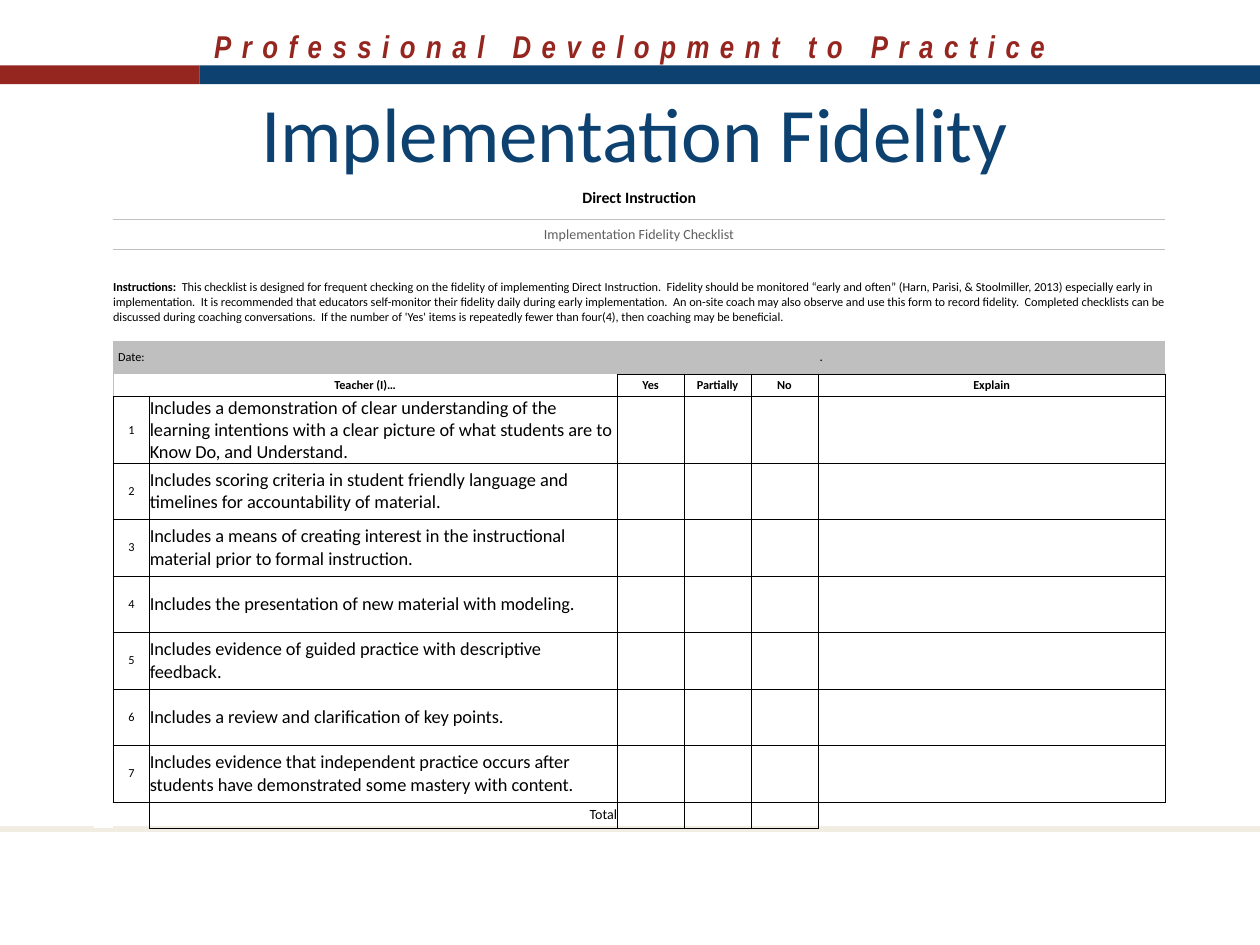
from lxml.etree import SubElement
from pptx import Presentation
from pptx.dml.color import RGBColor
from pptx.enum.shapes import MSO_CONNECTOR as Connector, MSO_SHAPE as Shape
from pptx.enum.text import MSO_ANCHOR as Anchor, MSO_AUTO_SIZE as AutoSize, PP_ALIGN as Align
from pptx.oxml.ns import qn
from pptx.util import Cm, Pt

RED, BLUE, BEIGE = "95261F", "0D4170", "F2EDE2"
BLACK, WHITE, GRAY, SILVER, DARK_GRAY = "000000", "FFFFFF", "BFBFBF", "C0C0C0", "5F5F5F"


def color(value):
    return RGBColor.from_string(value)


def style_run(run, size, value=BLACK, bold=False, name="Calibri"):
    run.font.name, run.font.size, run.font.bold = name, Pt(size), bold
    run.font.color.rgb = color(value)


presentation = Presentation()
presentation.slide_width, presentation.slide_height = Cm(25.4), Cm(19.05)
slide = presentation.slides.add_slide(presentation.slide_layouts[6])

# Header line with wide letter spacing
header = slide.shapes.add_textbox(Cm(0), Cm(0.43), Cm(25.4), Cm(1.02)).text_frame
header.word_wrap = True
header.auto_size = AutoSize.SHAPE_TO_FIT_TEXT
header.text = "Professional Development to Practice"
header.paragraphs[0].alignment = Align.CENTER
header_run = header.paragraphs[0].runs[0]
style_run(header_run, 18, RED, True, "Arial Narrow")
header_run.font.italic = True
header_run.font._element.set("spc", "600")

# Two-colour band
for left, width, fill in [(0, 4.02, RED), (4.02, 21.38, BLUE)]:
    band = slide.shapes.add_shape(Shape.RECTANGLE, Cm(left), Cm(1.32), Cm(width), Cm(0.38))
    band.shadow.inherit = False
    band.fill.solid()
    band.fill.fore_color.rgb = color(fill)
    band.line.fill.background()

# Footer rule
rule = slide.shapes.add_connector(Connector.STRAIGHT, Cm(0), Cm(16.71), Cm(25.4), Cm(16.71))
rule.line.color.rgb = color(BEIGE)
rule.line.width = Pt(3)
SubElement(rule._element.spPr, qn("a:effectLst"))

# Title
title = slide.shapes.add_textbox(Cm(1.27), Cm(1.7), Cm(23.06), Cm(1.91)).text_frame
title.word_wrap = True
title.vertical_anchor = Anchor.MIDDLE
title.text = "Implementation Fidelity"
title.paragraphs[0].alignment = Align.CENTER
style_run(title.paragraphs[0].runs[0], 44, BLUE)

# Checklist table
column_widths = [0.38, 0.74, 9.42, 1.35, 1.35, 1.35, 7]
row_heights = [0.61, 0.61, 1.52, 0.33, 0.66, 0.46] + [1.14] * 7 + [0.53]
frame = slide.shapes.add_table(len(row_heights), len(column_widths),
                               Cm(1.9), Cm(3.81), Cm(sum(column_widths)), Cm(sum(row_heights)))
table = frame.table
table.first_row = table.horz_banding = False
for column, width in zip(table.columns, column_widths):
    column.width = Cm(width)
for row, height in zip(table.rows, row_heights):
    row.height = Cm(height)
for row, last in [(0, 6), (1, 6), (2, 6), (5, 2)]:
    table.cell(row, 1).merge(table.cell(row, last))

# Cell texts: (row, column) -> runs of (text, size, bold), alignment, anchor, colour
instructions = (
    "  This checklist is designed for frequent checking on the fidelity of implementing Direct "
    "Instruction.  Fidelity should be monitored “early and often” (Harn, Parisi, & Stoolmiller, "
    "2013) especially early in implementation.  It is recommended that educators self-monitor "
    "their fidelity daily during early implementation.  An on-site coach may also observe and use "
    "this form to record fidelity.  Completed checklists can be discussed during coaching "
    "conversations.  If the number of 'Yes' items is repeatedly fewer than four(4), then coaching "
    "may be beneficial.")
practices = [
    "Includes a demonstration of clear understanding of the learning intentions with a clear "
    "picture of what students are to Know Do, and Understand.",
    "Includes scoring criteria in student friendly language and timelines for accountability "
    "of material.",
    "Includes a means of creating interest in the instructional material prior to formal "
    "instruction.",
    "Includes the presentation of new material with modeling.",
    "Includes evidence of guided practice with descriptive feedback.",
    "Includes a review and clarification of key points.",
    "Includes evidence that independent practice occurs after students have demonstrated some "
    "mastery with content.",
]
texts = {
    (0, 1): ([("Direct Instruction", 9, True)], Align.CENTER, Anchor.TOP, BLACK),
    (1, 1): ([("Implementation Fidelity Checklist", 8, False)],
             Align.CENTER, Anchor.MIDDLE, DARK_GRAY),
    (2, 1): ([("Instructions:", 7, True), (instructions, 7, False)],
             Align.LEFT, Anchor.BOTTOM, BLACK),
    (4, 1): ([("Date:", 7, False)], Align.CENTER, Anchor.MIDDLE, BLACK),
    (4, 6): ([(".", 6, True)], Align.LEFT, Anchor.MIDDLE, BLACK),
    (13, 2): ([("Total", 8, False)], Align.RIGHT, Anchor.MIDDLE, BLACK),
}
headings = {1: "Teacher (I)…", 3: "Yes", 4: "Partially", 5: "No", 6: "Explain"}
for column, heading in headings.items():
    texts[5, column] = ([(heading, 7, True)], Align.CENTER, Anchor.MIDDLE, BLACK)
for number, practice in enumerate(practices, 1):
    texts[5 + number, 1] = ([(str(number), 7, False)], Align.CENTER, Anchor.MIDDLE, BLACK)
    texts[5 + number, 2] = ([(practice, 10.5, False)], Align.LEFT, Anchor.MIDDLE, BLACK)

# Cell borders that differ from a full black grid
borders = {(row, column): {} for row in range(4) for column in range(7)}
for column in range(1, 7):
    borders[0, column] = {"B": SILVER}
    borders[1, column] = {"T": SILVER, "B": SILVER}
    borders[2, column] = {"T": SILVER}
    borders[4, column] = {"B": BLACK}
borders[4, 1] = {"L": SILVER}
borders[4, 2] = {"R": SILVER}
borders[4, 3] = {"L": SILVER, "B": BLACK}
for column in (1, 2):
    borders[5, column] = {"L": SILVER, "R": BLACK, "B": BLACK}
for row in range(4, 13):
    borders[row, 0] = {"R": SILVER if row < 6 else BLACK}
borders[13, 0] = {}
borders[13, 1] = {"T": BLACK, "R": BLACK}
borders[13, 6] = {"L": BLACK, "T": BLACK}
full_grid = dict.fromkeys("LRTB", BLACK)

for row in range(len(row_heights)):
    for column in range(len(column_widths)):
        cell = table.cell(row, column)
        cell.margin_left = cell.margin_right = cell.margin_top = cell.margin_bottom = Cm(0)
        paragraph = cell.text_frame.paragraphs[0]
        if (row, column) in texts:
            runs, alignment, anchor, value = texts[row, column]
            paragraph.alignment = alignment
            cell.vertical_anchor = anchor
            for text, size, bold in runs:
                run = paragraph.add_run()
                run.text = text
                style_run(run, size, value, bold)
        else:
            SubElement(paragraph._p, qn("a:endParaRPr"), sz="500")

        # Borders go before the fill
        properties = cell._tc.get_or_add_tcPr()
        sides = borders.get((row, column), full_grid)
        for side in "LRTB":
            line = SubElement(properties, qn("a:ln" + side), w=str(Pt(0.5)))
            if side in sides:
                solid = SubElement(line, qn("a:solidFill"))
                SubElement(solid, qn("a:srgbClr"), val=sides[side])
            else:
                SubElement(line, qn("a:noFill"))
        if column == 0 or row in (0, 1) or row == 4:
            cell.fill.solid()
            cell.fill.fore_color.rgb = color(GRAY if row == 4 and column else WHITE)
        else:
            cell.fill.background()
table.cell(4, 6).margin_left = Cm(0.04)

presentation.save("out.pptx")
